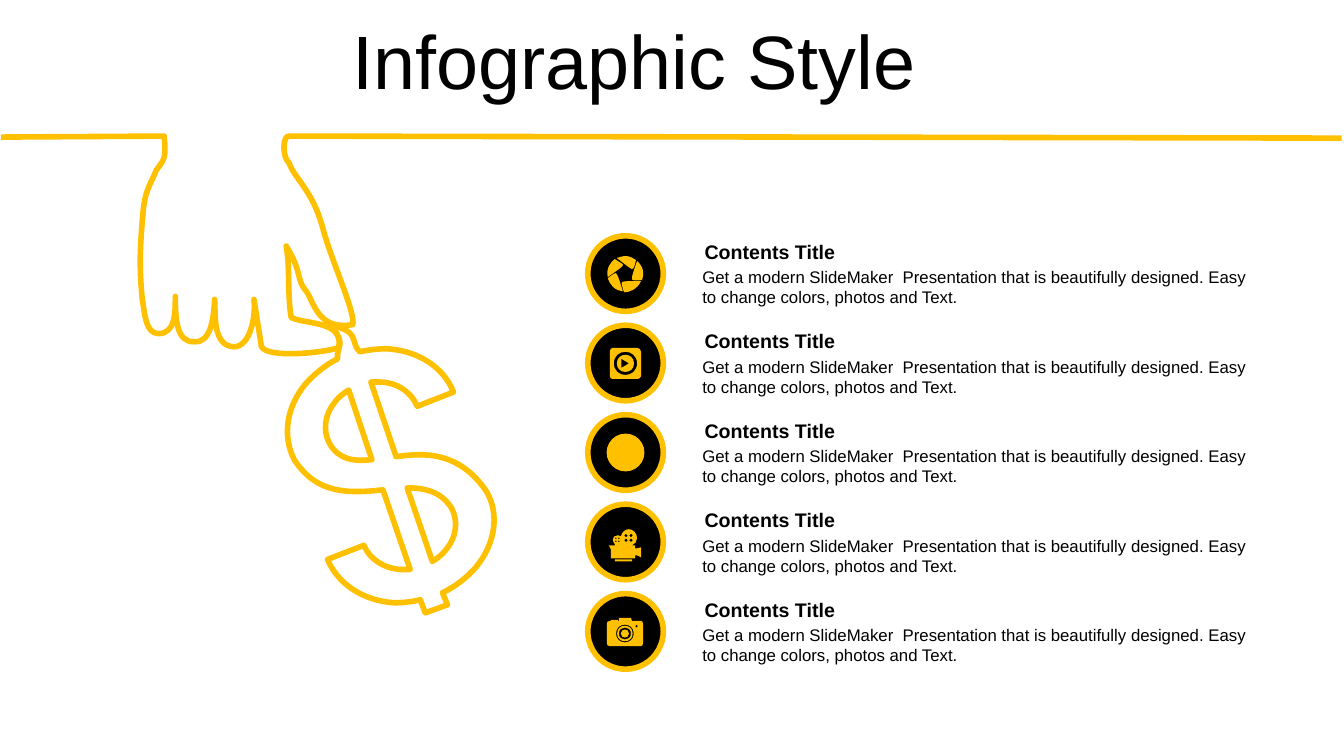
from dataclasses import dataclass, field
from typing import Any

from lxml import etree
from pptx import Presentation
from pptx.dml.color import RGBColor
from pptx.enum.shapes import MSO_SHAPE
from pptx.enum.text import MSO_ANCHOR, MSO_AUTO_SIZE
from pptx.oxml.ns import qn
from pptx.util import Pt

OVAL = MSO_SHAPE.OVAL
MIDDLE = MSO_ANCHOR.MIDDLE
GROW = MSO_AUTO_SIZE.SHAPE_TO_FIT_TEXT

GOLD = RGBColor(0xFF, 0xC0, 0x00)
BLACK = RGBColor(0x00, 0x00, 0x00)

UNIT = Pt(0.72)
ARGUMENT_COUNTS = {"M": 2, "L": 2, "C": 6, "O": 3, "Z": 0}

ROW_PITCH = 63.9
BADGE_LEFT, BADGE_TOP, BADGE_SIZE = 419.8, 168.4, 54
DISC_SIZE = 27
OUTLINE_WIDTH = 4
TEXT_LEFT, TEXT_WIDTH = 494.6, 409

HAND = """M 1331 137 L 287 135 C 281 134 279 154 287 162 C 292 177 311 189 321 229
C 330 261 353 311 350 322 C 316 328 312 301 304 289 C 293 276 301 272 284 244
C 288 266 285 293 289 315 C 303 322 342 318 336 345 C 316 351 257 356 259 341
L 252 297 C 254 312 249 344 232 344 C 211 343 214 313 213 297
C 212 317 209 340 193 339 C 175 340 174 316 174 294 C 174 311 174 331 157 331
C 145 330 144 315 141 295 C 138 262 139 245 142 210 C 144 188 150 182 155 169
C 163 158 165 158 163 135 L 1 136"""

DOLLAR = """M 369 456 L 346 387 C 341 390 336 394 333 398 C 322 411 320 427 327 440
C 336 456 351 458 369 456 Z
M 429 557 C 434 554 439 550 442 546 C 453 533 455 517 448 504
C 438 488 422 484 404 484 L 429 557 Z
M 444 600 L 422 608 L 417 595 C 409 597 400 598 391 598 C 360 596 335 579 325 555
L 361 541 C 367 555 381 564 398 565 C 401 565 404 565 407 565 L 380 486
C 349 489 315 492 292 456 C 280 433 284 404 303 381 C 312 371 323 362 335 356
C 333 345 345 342 328 323 C 358 328 347 340 357 349 C 366 347 375 346 384 346
C 415 348 440 364 450 389 L 414 403 C 408 389 395 380 378 379
C 374 379 371 379 368 379 L 393 453 C 422 449 456 448 483 488
C 496 511 491 540 472 563 C 463 573 452 582 439 588 L 444 600 Z"""

APERTURE = """M 627 279 L 636 279 C 632 287 625 290 619 290
C 618 286 616 281 617 280 C 618 279 622 279 627 279 Z
M 611 271 C 613 272 616 283 618 289 C 609 288 605 282 603 276 C 606 274 609 271 611 271 Z
M 632 259 C 639 265 639 272 637 278 C 632 278 627 279 627 277 C 626 276 630 265 632 259 Z
M 610 257 C 614 260 619 262 618 263 C 618 265 608 271 603 275 C 601 266 606 260 610 257 Z
M 620 254 C 625 254 628 256 631 258 C 630 262 629 267 627 267
C 626 267 617 260 612 256 C 615 255 618 254 620 254 Z"""

PLAYER = """M 616.5 356 L 616.5 365 L 624 360.5 Z O 620.5 360.5 8.5 O 620.5 360.5 11.5
M 608 345 L 632 345 C 634 345 636 347 636 349 L 636 373 C 636 375 634 376 632 376
L 608 376 C 606 376 605 375 605 373 L 605 349 C 605 347 606 345 608 345 Z"""

PROJECTOR = """M 610 555 L 627 555 L 627 557 L 610 557 Z
O 614 537 1 O 611 537 1 O 614 534 1 O 611 534 1
O 626 536 1.8 O 621 536 1.8 O 626 531.3 1.8 O 621 531.3 1.8
M 624 525 C 628 525 632 529 632 534 C 632 537 630 540 627 541 L 630 541 L 630 544
L 632 544 L 636 543 L 636 553 L 632 551 L 630 551 L 630 554 L 606 554 L 606 545
L 604 541 L 610 541 L 610 540 C 609 539 608 537 608 535 C 608 533 610 531 613 531
C 614 531 615 531 616 532 C 617 528 620 525 624 525 Z"""

CAMERA = """O 620 628.5 4 O 620 628.5 6 O 620 628.5 7.7 O 620 628.5 8.8 O 631.6 621.3 1.4
M 614 613 L 626 613 L 627 616 L 636 616 C 637 616 638 617 638 619 L 638 638
C 638 640 637 641 636 641 L 605 641 C 603 641 602 640 602 638 L 602 619
C 602 617 603 616 605 616 L 606 616 L 606 615 L 613 615 L 613 616 L 614 616 Z"""


@dataclass
class Caption:
    text: str
    left: float
    top: float
    width: float
    height: float
    font: dict[str, Any]
    frame: dict[str, Any] = field(default_factory=dict)
    paragraph: dict[str, Any] = field(default_factory=dict)


@dataclass
class Outline:
    points: list[tuple[float, float]] = field(default_factory=list)
    segment_sizes: list[int] = field(default_factory=list)
    closed: bool = False

    def extend(self, values: list[float]) -> None:
        added = list(zip(values[::2], values[1::2]))
        if self.points:
            self.segment_sizes.append(len(added))
        self.points += added


def apply_format(target: Any, values: dict[str, Any]) -> None:
    for name, value in values.items():
        setattr(target, name, value)


def add_caption(shapes: Any, caption: Caption) -> None:
    box = shapes.add_textbox(
        Pt(caption.left), Pt(caption.top), Pt(caption.width), Pt(caption.height)
    )
    frame = box.text_frame
    apply_format(frame, {"word_wrap": True, **caption.frame})
    paragraph = frame.paragraphs[0]
    apply_format(paragraph, caption.paragraph)
    run = paragraph.add_run()
    run.text = caption.text
    apply_format(run.font, {"name": "Arial", **caption.font})
    run.font.color.rgb = BLACK


def paint(shape: Any, fill: RGBColor | None, line: RGBColor | None) -> None:
    shape.shadow.inherit = False
    for part, color in ((shape.fill, fill), (shape.line.fill, line)):
        if color is None:
            part.background()
        else:
            part.solid()
            part.fore_color.rgb = color
    if line is not None:
        shape.line.width = Pt(OUTLINE_WIDTH)


def read_outlines(drawing: str) -> list[Outline]:
    outlines: list[Outline] = []
    tokens = iter(drawing.split())
    for command in tokens:
        values = [float(next(tokens)) for _ in range(ARGUMENT_COUNTS[command])]
        if command in "MO":
            outlines.append(Outline())
        outline = outlines[-1]
        if command == "O":
            x, y, radius = values
            bulge = radius * 4 / 3
            outline.extend([x - radius, y])
            for side in (-1, 1):
                near, far, level = x + side * radius, x - side * radius, y + side * bulge
                outline.extend([near, level, far, level, far, y])
        else:
            outline.extend(values) if values else None
        outline.closed = command in "OZ"
    return outlines


def bend_segments(shape: Any, segment_sizes: list[int]) -> None:
    segments = iter(list(shape._element.iter(qn("a:lnTo"))))
    for size in segment_sizes:
        segment = next(segments)
        if size == 3:
            curve = etree.Element(qn("a:cubicBezTo"))
            segment.addprevious(curve)
            for piece in (segment, next(segments), next(segments)):
                curve.append(piece[0])
                piece.getparent().remove(piece)


def add_drawing(shapes: Any, drawing: str, fill: RGBColor | None, line: RGBColor | None) -> None:
    builder = None
    outlines = read_outlines(drawing)
    for outline in outlines:
        first, *rest = [(x * UNIT, y * UNIT) for x, y in outline.points]
        if builder is None:
            builder = shapes.build_freeform(*first)
        else:
            builder.move_to(*first)
        builder.add_line_segments(rest, close=outline.closed)
    shape = builder.convert_to_shape()
    bend_segments(shape, [size for outline in outlines for size in outline.segment_sizes])
    paint(shape, fill, line)


def add_disc(shapes: Any, left: float, top: float, size: float,
             fill: RGBColor, line: RGBColor | None) -> None:
    paint(shapes.add_shape(OVAL, Pt(left), Pt(top), Pt(size), Pt(size)), fill, line)


def add_row(shapes: Any, index: int, icon: str | None) -> None:
    offset = index * ROW_PITCH
    top = BADGE_TOP + offset
    add_disc(shapes, BADGE_LEFT, top, BADGE_SIZE, BLACK, GOLD)
    if icon is None:
        inset = (BADGE_SIZE - DISC_SIZE) / 2
        add_disc(shapes, BADGE_LEFT + inset, top + inset, DISC_SIZE, GOLD, None)
    else:
        add_drawing(shapes, icon, GOLD, None)
    add_caption(shapes, Caption(
        "Get a modern SlideMaker  Presentation that is beautifully designed. "
        "Easy to change colors, photos and Text.",
        TEXT_LEFT, 187.2 + offset, TEXT_WIDTH, 36, {"size": Pt(12)}, {"auto_size": GROW}))
    add_caption(shapes, Caption(
        "Contents Title", TEXT_LEFT, 167.8 + offset, TEXT_WIDTH, 24.5,
        {"size": Pt(14), "bold": True},
        {"auto_size": GROW, "margin_left": Pt(8.64), "margin_right": Pt(8.64)}))


def main() -> None:
    presentation = Presentation()
    presentation.slide_width, presentation.slide_height = Pt(960), Pt(540)
    shapes = presentation.slides.add_slide(presentation.slide_layouts[6]).shapes
    add_drawing(shapes, HAND, None, GOLD)
    add_caption(shapes, Caption(
        "Infographic Style", 244.8, 18, 694, 56.9, {"size": Pt(54)},
        {"vertical_anchor": MIDDLE}, {"line_spacing": 0.9, "space_before": Pt(10)}))
    for index, icon in enumerate((APERTURE, PLAYER, None, PROJECTOR, CAMERA)):
        add_row(shapes, index, icon)
    add_drawing(shapes, DOLLAR, None, GOLD)
    presentation.save("out.pptx")


if __name__ == "__main__":
    main()
